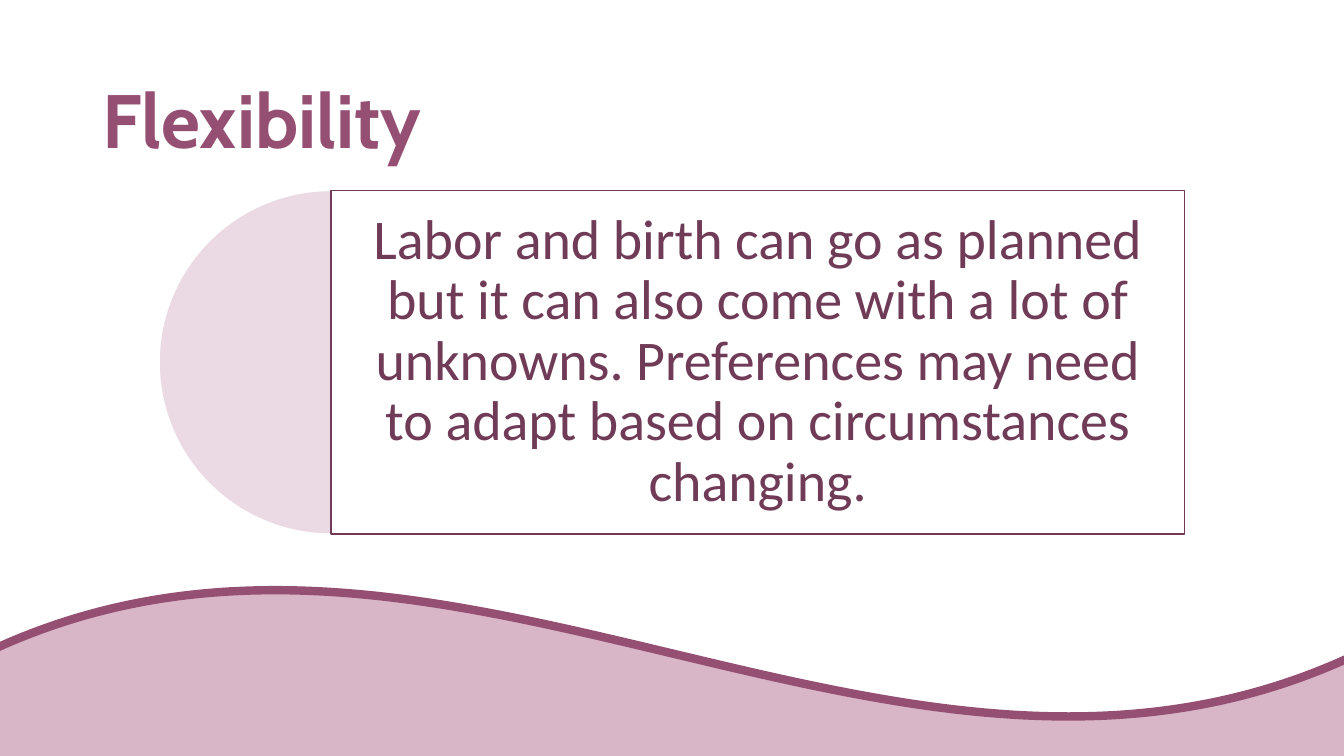
"""Build the Flexibility slide: a title, a framed statement and a wave."""
from lxml.etree import SubElement
from pptx import Presentation
from pptx.dml.color import RGBColor
from pptx.enum.shapes import MSO_SHAPE
from pptx.enum.text import MSO_ANCHOR, MSO_AUTO_SIZE, PP_ALIGN
from pptx.oxml.ns import qn
from pptx.util import Cm, Pt

PLUM = RGBColor(0x95, 0x4F, 0x72)
DARK_PLUM = RGBColor(0x70, 0x3B, 0x56)
ROSE = RGBColor(0xD8, 0xB5, 0xC7)
PALE_ROSE = RGBColor(0xEB, 0xDA, 0xE3)
WHITE = RGBColor(0xFF, 0xFF, 0xFF)

PANEL_TOP = 4.8
PANEL_HEIGHT = 8.66
PIE_LEFT = 4.01
PANEL_LEFT = PIE_LEFT + PANEL_HEIGHT / 2


def add_figure(preset, left, top, width, height, fill, line, weight):
    figure = slide.shapes.add_shape(preset, Cm(left), Cm(top), Cm(width), Cm(height))
    figure.shadow.inherit = False
    figure.fill.solid()
    figure.fill.fore_color.rgb = fill
    figure.line.color.rgb = line
    figure.line.width = Pt(weight)
    return figure


def write_text(frame, text, font_name, size, color, bold, align, spacing):
    frame.text = text
    frame.word_wrap = True
    frame.auto_size = MSO_AUTO_SIZE.NONE
    frame.vertical_anchor = MSO_ANCHOR.MIDDLE
    paragraph = frame.paragraphs[0]
    paragraph.alignment = align
    paragraph.line_spacing = spacing
    font = paragraph.runs[0].font
    font.name = font_name
    font.size = Pt(size)
    font.bold = bold
    font.color.rgb = color


presentation = Presentation()
presentation.slide_width = Cm(33.87)
presentation.slide_height = Cm(19.05)
slide = presentation.slides.add_slide(presentation.slide_layouts[5])

heading = slide.shapes.title
heading.left, heading.top = Cm(2.33), Cm(1.02)
heading.width, heading.height = Cm(29.21), Cm(3.68)
write_text(heading.text_frame, "Flexibility", "Cabin", 54, PLUM, True, PP_ALIGN.LEFT, 1.1)

add_figure(MSO_SHAPE.WAVE, -0.38, 14.81, 34.62, 13.23, ROSE, PLUM, 6)

half_circle = add_figure(MSO_SHAPE.PIE, PIE_LEFT, PANEL_TOP, PANEL_HEIGHT, PANEL_HEIGHT,
                         PALE_ROSE, WHITE, 1)
half_circle.adjustments[0] = 54
half_circle.adjustments[1] = 162

statement = add_figure(MSO_SHAPE.RECTANGLE, PANEL_LEFT, PANEL_TOP, 21.51, PANEL_HEIGHT,
                       WHITE, DARK_PLUM, 1)
panel_color = statement.fill._xPr.find(qn("a:solidFill"))[0]
SubElement(panel_color, qn("a:alpha"), val="90000")
statement_frame = statement.text_frame
statement_frame.margin_left = statement_frame.margin_right = Cm(0.43)
statement_frame.margin_top = statement_frame.margin_bottom = Cm(0.43)
write_text(
    statement_frame,
    "Labor and birth can go as planned but it can also come with a lot of unknowns. "
    "Preferences may need to adapt based on circumstances changing.",
    "Calibri", 40, DARK_PLUM, False, PP_ALIGN.CENTER, 0.9)

presentation.save("out.pptx")
